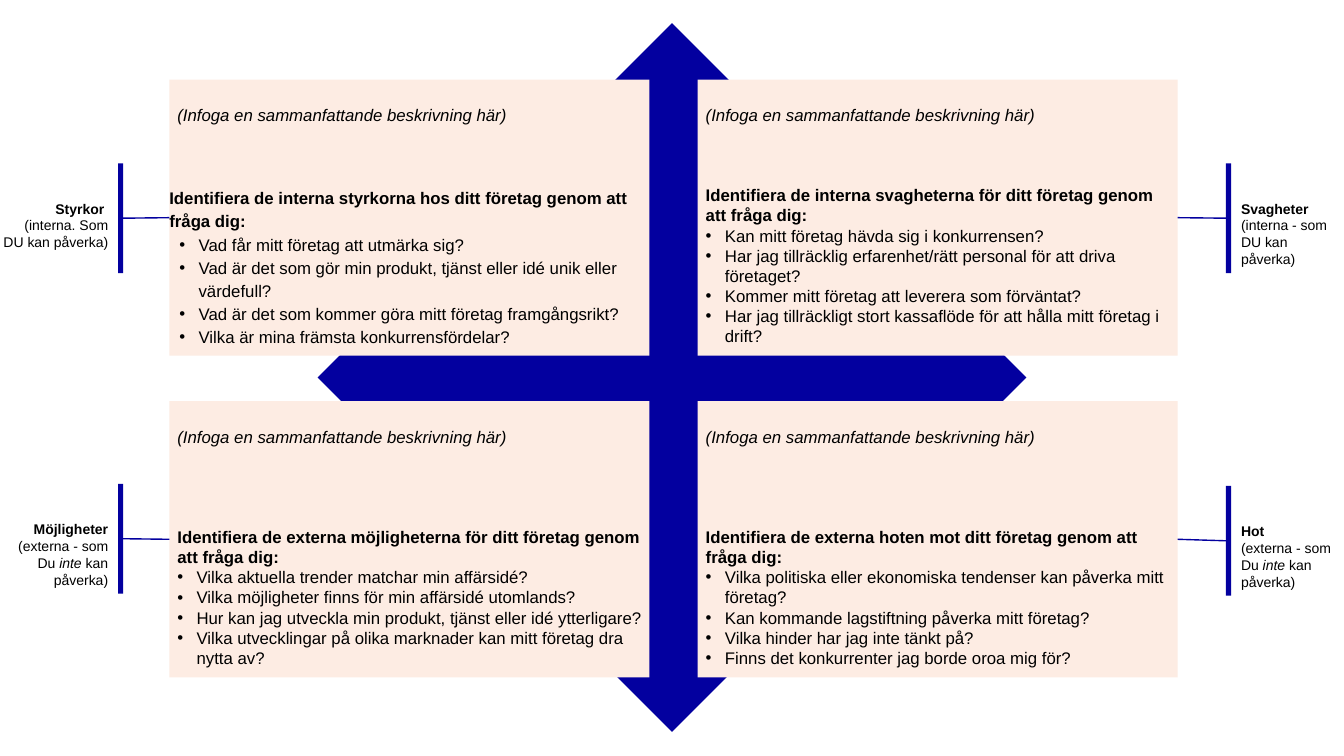
from dataclasses import dataclass

from lxml.etree import SubElement
from pptx import Presentation
from pptx.dml.color import RGBColor as Rgb
from pptx.enum.shapes import MSO_CONNECTOR as Line, MSO_SHAPE as Shape
from pptx.enum.text import MSO_ANCHOR as Anchor, MSO_AUTO_SIZE as Fit, PP_ALIGN as Align
from pptx.oxml.ns import qn
from pptx.util import Inches, Pt


@dataclass(frozen=True)
class Theme:
    blue: Rgb = Rgb(0x03, 0x00, 0x9F)
    peach: Rgb = Rgb(0xFD, 0xEC, 0xE3)
    black: Rgb = Rgb(0, 0, 0)
    font: str = "Arial"
    body: float = 12
    label: float = 10
    row: float = 14.3  # height of one line of body text


class Board:
    """Places elements by percent of the slide's width and height."""

    def __init__(self, deck, theme):
        self.deck, self.theme = deck, theme
        self.slide = deck.slides.add_slide(deck.slide_layouts[6])
        self.shapes = self.slide.shapes

    def box(self, x, y, w, h):
        wide, high = self.deck.slide_width, self.deck.slide_height
        return [round(part * side / 100)
                for part, side in ((x, wide), (y, high), (w, wide), (h, high))]

    def block(self, kind, color, *place):
        shape = self.shapes.add_shape(kind, *self.box(*place))
        shape.shadow.inherit = False
        shape.fill.solid()
        shape.fill.fore_color.rgb = color
        shape.line.fill.background()
        return shape

    def frame(self, shape, left, top, right, bottom):
        text = shape.text_frame
        text.word_wrap = True
        text.vertical_anchor = Anchor.TOP
        text.margin_left, text.margin_top = Inches(left), Inches(top)
        text.margin_right, text.margin_bottom = Inches(right), Inches(bottom)
        return text

    def para(self, text, first=False, align=Align.LEFT):
        par = text.paragraphs[0] if first else text.add_paragraph()
        par.alignment = align
        return par

    def run(self, par, words, size, bold=False, italic=False):
        run = par.add_run()
        run.text = words
        font = run.font
        font.name, font.size = self.theme.font, Pt(size)
        font.bold, font.italic = bold, italic
        font.color.rgb = self.theme.black

    def indent(self, par, left, hang=0, bullet=False):
        props = par._p.get_or_add_pPr()
        props.set("marL", str(Inches(left)))
        props.set("indent", str(Inches(hang)))
        if bullet:
            SubElement(props, qn("a:buFont")).set("typeface", self.theme.font)
            SubElement(props, qn("a:buChar")).set("char", "•")

    def card(self, x, y, head, items, gap, loose):
        size = self.theme.body
        card = self.block(Shape.RECTANGLE, self.theme.peach, x, y, CARD_W, CARD_H)
        text = self.frame(card, 0, 0.25, 0, 0.05)
        hint = self.para(text, first=True)
        self.indent(hint, 0.08)
        self.run(hint, HINT, size, italic=True)
        title = self.para(text)
        title.space_before = Pt(gap * self.theme.row)
        self.indent(title, 0 if loose else 0.08)
        self.run(title, head, size, bold=True)
        for item in items:
            par = self.para(text)
            if loose:
                par.line_spacing = 1.15
            self.indent(par, 0.29 if loose else 0.27, -0.19, bullet=True)
            self.run(par, item, size)
        if loose:
            title.line_spacing = 1.15
        return card

    def label(self, x, y, w, rows, align, name, note):
        place = self.box(x, y, w, 1.73 + 2.13 * rows)
        box = self.shapes.add_textbox(*place)
        left = 0.02 if align == Align.RIGHT else 0.1
        text = self.frame(box, left, 0.05, 0.1, 0.05)
        text.auto_size = Fit.SHAPE_TO_FIT_TEXT
        self.run(self.para(text, True, align), name, self.theme.label, bold=True)
        par = self.para(text, align=align)
        for words, slant in note:
            self.run(par, words, self.theme.label, italic=slant)

    def join(self, start, side, end, face):
        line = self.shapes.add_connector(Line.STRAIGHT, 0, 0, 0, 0)
        line.begin_connect(start, side)
        line.end_connect(end, face)
        line.line.color.rgb = self.theme.blue
        line.line.width = Pt(1)
        SubElement(line._element.spPr, qn("a:effectLst"))


# Layout, in percent of the slide
CARD_W, CARD_H = 35.71, 36.53
CARD_X, CARD_Y = (12.6, 51.91), (10.53, 53.07)
BAR_X, BAR_W, BAR_H = (8.78, 91.22), 0.38, 14.53
LABEL_X, LABEL_W = (0, 91.6), (8.78, 8.25)
DROP = 4.2  # from the top of a bar to its label

# Wording
HINT = "(Infoga en sammanfattande beskrivning här)"
OUTER = [("(externa - som Du ", False), ("inte", True), (" kan påverka)", False)]
# column, row, bar top, label lines, label, note, heading, questions
PARTS = [
    (0, 0, 21.6, 3, "Styrkor ", [("(interna. Som DU kan påverka)", False)],
     "Identifiera de interna styrkorna hos ditt företag genom att fråga dig:",
     ["Vad får mitt företag att utmärka sig?",
      "Vad är det som gör min produkt, tjänst eller idé unik eller värdefull?",
      "Vad är det som kommer göra mitt företag framgångsrikt?",
      "Vilka är mina främsta konkurrensfördelar?"]),
    (1, 0, 21.6, 4, "Svagheter", [("(interna - som DU kan påverka)", False)],
     "Identifiera de interna svagheterna för ditt företag genom att fråga dig:",
     ["Kan mitt företag hävda sig i konkurrensen?",
      "Har jag tillräcklig erfarenhet/rätt personal för att driva företaget?",
      "Kommer mitt företag att leverera som förväntat?",
      "Har jag tillräckligt stort kassaflöde för att hålla mitt företag i drift?"]),
    (0, 1, 64, 4, "Möjligheter", OUTER,
     "Identifiera de externa möjligheterna för ditt företag genom att fråga dig:",
     ["Vilka aktuella trender matchar min affärsidé?",
      "Vilka möjligheter finns för min affärsidé utomlands?",
      "Hur kan jag utveckla min produkt, tjänst eller idé ytterligare?",
      "Vilka utvecklingar på olika marknader kan mitt företag dra nytta av?"]),
    (1, 1, 64.27, 4, "Hot", OUTER,
     "Identifiera de externa hoten mot ditt företag genom att fråga dig:",
     ["Vilka politiska eller ekonomiska tendenser kan påverka mitt företag?",
      "Kan kommande lagstiftning påverka mitt företag?",
      "Vilka hinder har jag inte tänkt på?",
      "Finns det konkurrenter jag borde oroa mig för?"]),
]


def main():
    deck = Presentation()
    deck.slide_width, deck.slide_height = Inches(13.33), Inches(7.5)
    theme = Theme()
    board = Board(deck, theme)

    # Diamond behind the four cards
    board.block(Shape.DIAMOND, theme.blue, 23.63, 3.07, 52.74, 93.73)

    # Each card with its bar, line and label
    for col, row, top, rows, name, note, head, items in PARTS:
        card = board.card(CARD_X[col], CARD_Y[row], head, items,
                          gap=3 + row, loose=col == row == 0)
        bar = board.block(Shape.RECTANGLE, theme.blue, BAR_X[col], top, BAR_W, BAR_H)
        if col == 0:
            board.join(card, 1, bar, 3)
        else:
            board.join(bar, 1, card, 3)
        align = (Align.RIGHT, Align.LEFT)[col]
        board.label(LABEL_X[col], top + DROP, LABEL_W[col], rows, align, name, note)

    deck.save("out.pptx")


if __name__ == "__main__":
    main()
